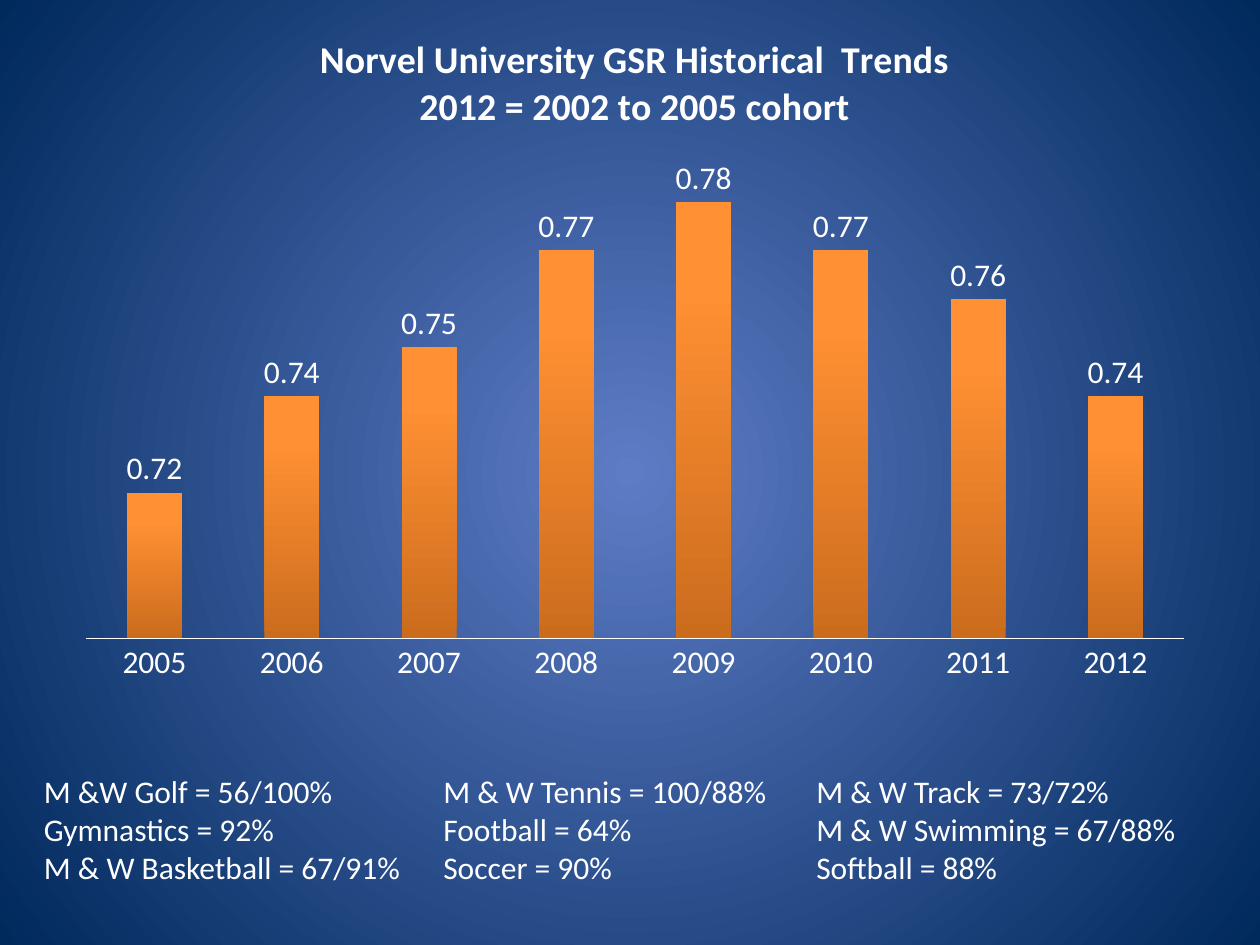
from lxml.etree import SubElement
from pptx import Presentation
from pptx.chart.data import CategoryChartData
from pptx.dml.color import RGBColor
from pptx.enum.chart import XL_CHART_TYPE, XL_LABEL_POSITION, XL_TICK_LABEL_POSITION, XL_TICK_MARK
from pptx.enum.text import MSO_AUTO_SIZE
from pptx.oxml import parse_xml
from pptx.oxml.ns import nsdecls, qn
from pptx.util import Inches, Pt

FONT = "Calibri"
COLORS = {
    "text": "FFFFFF",
    "glow": "5E7CC5",
    "navy": "00295C",
    "bar_bottom": "CB6C1D",
    "bar_top": "FF9033",
}
GSR_BY_YEAR = {
    "2005": 0.72, "2006": 0.74, "2007": 0.75, "2008": 0.77,
    "2009": 0.78, "2010": 0.77, "2011": 0.76, "2012": 0.74,
}
TITLE_LINES = ["Norvel University GSR Historical  Trends", "2012 = 2002 to 2005 cohort"]
# Left edge, width and lines of each column of team rates
TEAM_COLUMNS = [
    (0.25, 3.08, ["M &W Golf = 56/100%", "Gymnastics = 92%", "M & W Basketball = 67/91%"]),
    (3.42, 2.8, ["M & W Tennis = 100/88%", "Football = 64%", "Soccer = 90%"]),
    (6.38, 3.09, ["M & W Track = 73/72%", "M & W Swimming = 67/88%", "Softball = 88%"]),
]


def rgb(name):
    return RGBColor.from_string(COLORS[name])


def format_font(font, size=18, bold=False, color="text"):
    font.name = FONT
    font.size = Pt(size)
    font.bold = bold
    font.color.rgb = rgb(color)


def write_lines(frame, lines, **font_format):
    for index, line in enumerate(lines):
        paragraph = frame.add_paragraph() if index else frame.paragraphs[0]
        run = paragraph.add_run()
        run.text = line
        format_font(run.font, **font_format)


def fill_gradient(fill, start, end, end_position=1.0):
    fill.gradient()
    first, last = fill.gradient_stops
    first.color.rgb = rgb(start)
    last.color.rgb = rgb(end)
    last.position = end_position


def paint_background(slide):
    fill_gradient(slide.background.fill, "glow", "navy")
    # Turn the linear gradient into a circular one from the centre
    linear = next(slide.element.iter(qn("a:lin")))
    circle = parse_xml(
        f'<a:path {nsdecls("a")} path="circle">'
        '<a:fillToRect l="50000" t="50000" r="50000" b="50000"/></a:path>')
    linear.getparent().replace(linear, circle)


def place_plot(chart, **fractions):
    plot_area = chart.plots[0]._element.getparent()
    for old_layout in plot_area.findall(qn("c:layout")):
        plot_area.remove(old_layout)
    layout = parse_xml(f'<c:layout {nsdecls("c")}><c:manualLayout/></c:layout>')
    settings = {"layoutTarget": "inner", "xMode": "edge", "yMode": "edge", **fractions}
    for tag, value in settings.items():
        SubElement(layout[0], qn(f"c:{tag}")).set("val", str(value))
    plot_area.insert(0, layout)


def add_trend_chart(slide):
    data = CategoryChartData(number_format="0.00")
    data.categories = list(GSR_BY_YEAR)
    data.add_series("Series 1", list(GSR_BY_YEAR.values()))
    chart = slide.shapes.add_chart(
        XL_CHART_TYPE.COLUMN_CLUSTERED,
        Inches(0.5), Inches(0.08), Inches(9.08), Inches(5.42), data).chart
    format_font(chart.font)
    chart.has_legend = False
    chart.has_title = True
    write_lines(chart.chart_title.text_frame, TITLE_LINES, size=21.6, bold=True)
    chart.chart_title.include_in_layout = False

    # Axes
    years = chart.category_axis
    years.major_tick_mark = XL_TICK_MARK.NONE
    years.tick_label_position = XL_TICK_LABEL_POSITION.NEXT_TO_AXIS
    years.format.line.color.rgb = rgb("text")
    years.format.line.width = Pt(0.75)
    rates = chart.value_axis
    rates.minimum_scale, rates.maximum_scale = 0.69, 0.79
    rates.has_major_gridlines = False
    rates.visible = False

    # Bars and their values
    plot = chart.plots[0]
    plot.gap_width, plot.overlap = 150, -25
    plot.vary_by_categories = False
    bar_fill = plot.series[0].format.fill
    fill_gradient(bar_fill, "bar_bottom", "bar_top", end_position=0.8)
    bar_fill.gradient_angle = 90
    plot.has_data_labels = True
    labels = plot.data_labels
    labels.show_value = True
    labels.position = XL_LABEL_POSITION.OUTSIDE_END
    format_font(labels.font)
    place_plot(chart, x=0.02, y=0.21, w=0.96, h=0.71)


def add_team_rates(slide, left, width, lines):
    box = slide.shapes.add_textbox(Inches(left), Inches(6.08), Inches(width), Inches(1.01))
    frame = box.text_frame
    frame.word_wrap = False
    frame.auto_size = MSO_AUTO_SIZE.SHAPE_TO_FIT_TEXT
    write_lines(frame, lines)


def main():
    deck = Presentation()
    deck.slide_width, deck.slide_height = Inches(10), Inches(7.5)
    slide = deck.slides.add_slide(deck.slide_layouts[6])
    paint_background(slide)
    add_trend_chart(slide)
    for left, width, lines in TEAM_COLUMNS:
        add_team_rates(slide, left, width, lines)
    deck.save("out.pptx")


if __name__ == "__main__":
    main()
